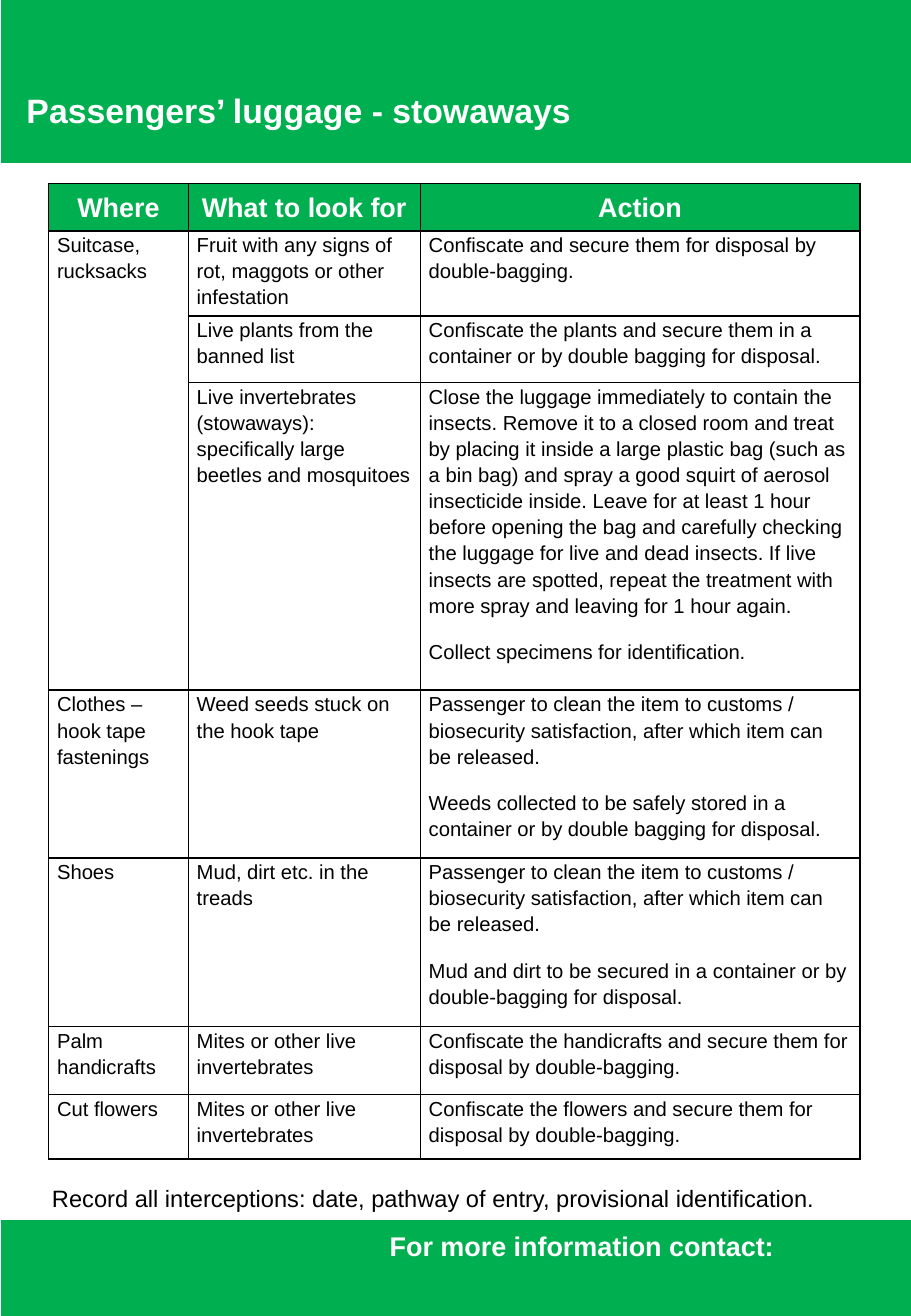
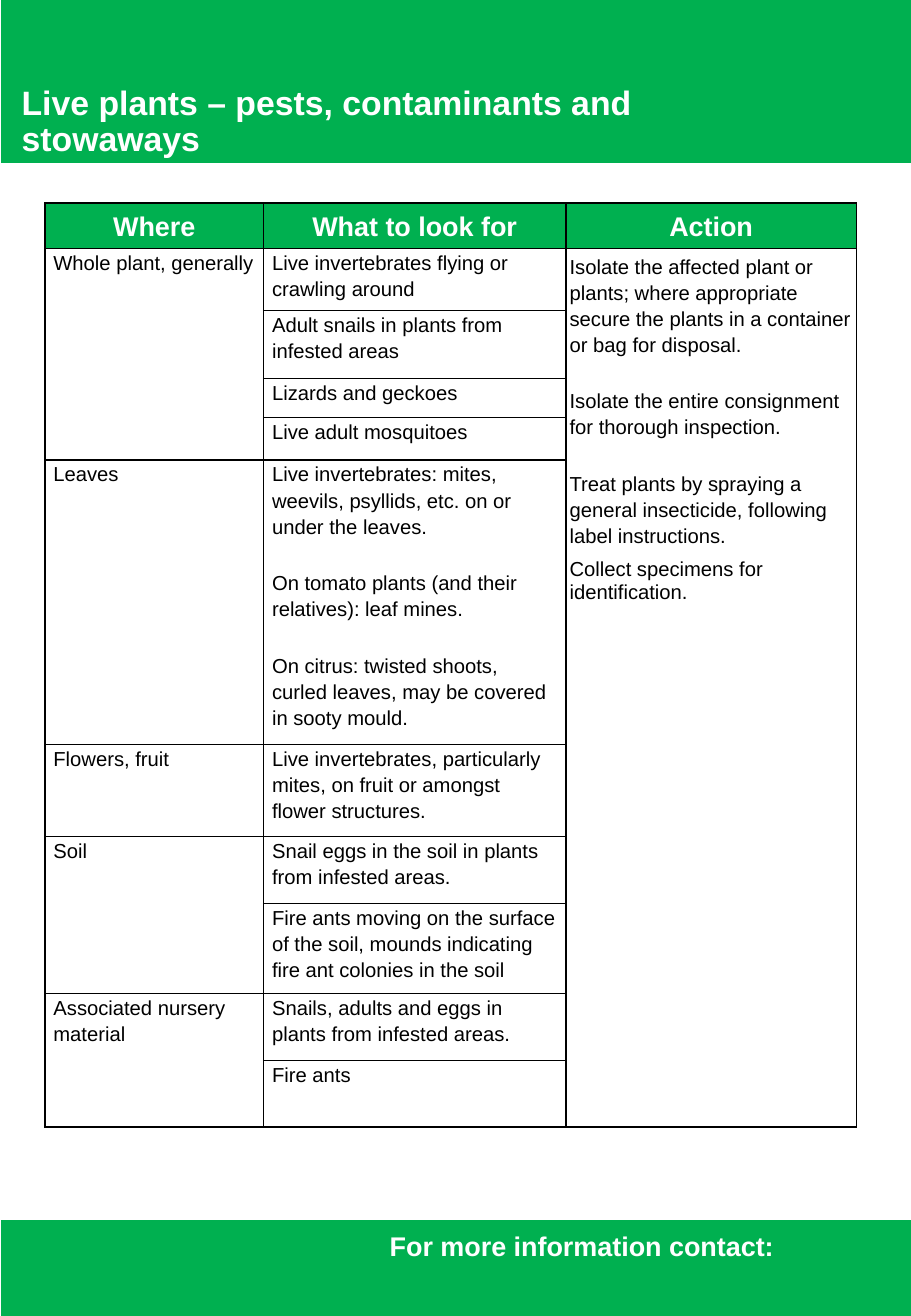
import pptx
import pptx.dml.color
import pptx.enum.shapes
import pptx.enum.text
import pptx.oxml
import pptx.oxml.ns
import pptx.util

PX = 9144  # EMU in one px, 100 px to the inch
COLOURS = {"green": "00B050", "white": "FFFFFF", "black": "000000"}
FONT = "Arial"
HEADINGS = ["Where", "What to look for", "Action"]
CLEANING = ("Passenger to clean the item to customs / biosecurity satisfaction, "
            "after which item can be released.")

# In the tables None continues the cell above; a list holds paragraphs.
LUGGAGE_ROWS = [
    HEADINGS,
    ["Suitcase, rucksacks",
     "Fruit with any signs of rot, maggots or other infestation",
     "Confiscate and secure them for disposal by double-bagging."],
    [None, "Live plants from the banned list",
     "Confiscate the plants and secure them in a container or by double bagging for disposal."],
    [None,
     "Live invertebrates (stowaways): specifically large beetles and mosquitoes",
     ["Close the luggage immediately to contain the insects. Remove it to a closed room and "
      "treat by placing it inside a large plastic bag (such as a bin bag) and spray a good "
      "squirt of aerosol insecticide inside. Leave for at least 1 hour before opening the bag "
      "and carefully checking the luggage for live and dead insects. If live insects are "
      "spotted, repeat the treatment with more spray and leaving for 1 hour again.",
      "Collect specimens for identification."]],
    ["Clothes – hook tape fastenings", "Weed seeds stuck on the hook tape",
     [CLEANING,
      "Weeds collected to be safely stored in a container or by double bagging for disposal."]],
    ["Shoes", "Mud, dirt etc. in the treads",
     [CLEANING,
      "Mud and dirt to be secured in a container or by double-bagging for disposal."]],
    ["Palm handicrafts", "Mites or other live invertebrates",
     "Confiscate the handicrafts and secure them for disposal by double-bagging."],
    ["Cut flowers", "Mites or other live invertebrates",
     "Confiscate the flowers and secure them for disposal by double-bagging."],
]

PLANT_ROWS = [
    HEADINGS,
    ["Whole plant, generally", "Live invertebrates flying or crawling around",
     ["Isolate the affected plant or plants; where appropriate secure the plants in a "
      "container or bag for disposal.",
      "Isolate the entire consignment for thorough inspection.",
      "Treat plants by spraying a general insecticide, following label instructions.",
      "Collect specimens for identification."]],
    [None, "Adult snails in plants from infested areas", None],
    [None, "Lizards and geckoes", None],
    [None, "Live adult mosquitoes", None],
    ["Leaves",
     ["Live invertebrates: mites, weevils, psyllids, etc. on or under the leaves.",
      "On tomato plants (and their relatives): leaf mines.",
      "On citrus: twisted shoots, curled leaves, may be covered in sooty mould."], None],
    ["Flowers, fruit",
     "Live invertebrates, particularly mites, on fruit or amongst flower structures.", None],
    ["Soil", "Snail eggs in the soil in plants from infested areas.", None],
    [None,
     "Fire ants moving on the surface of the soil, mounds indicating fire ant colonies "
     "in the soil", None],
    ["Associated nursery material",
     "Snails, adults and eggs in plants from infested areas.", None],
    [None, "Fire ants", None],
]


def colour(name):
    return pptx.dml.color.RGBColor.from_string(COLOURS[name])


def add_borders(cell):
    properties = cell._tc.get_or_add_tcPr()
    for side in ("lnL", "lnR", "lnT", "lnB"):
        properties.append(pptx.oxml.parse_xml(
            f'<a:{side} {pptx.oxml.ns.nsdecls("a")} w="12700"><a:solidFill>'
            f'<a:srgbClr val="{COLOURS["black"]}"/></a:solidFill></a:{side}>'))


def set_insets(cell, sides, ends):
    cell.margin_left = cell.margin_right = sides * PX
    cell.margin_top = cell.margin_bottom = ends * PX


class Poster:
    """Holds the presentation, its style and the current slide."""

    def __init__(self):
        self.presentation = pptx.Presentation()
        self.presentation.slide_width = 750 * PX
        self.presentation.slide_height = 1083 * PX
        self.slide = None

    def add_slide(self):
        """Start a slide with the shared bands and contact line."""
        self.slide = self.presentation.slides.add_slide(self.presentation.slide_layouts[6])
        self.band(-1, 135)
        self.band(1004, 79)
        self.text("For more information contact:", 311, 1007, 371, 37, 16, "white", bold=True)

    def band(self, top, height):
        shape = self.slide.shapes.add_shape(
            pptx.enum.shapes.MSO_SHAPE.RECTANGLE, 1 * PX, top * PX, 749 * PX, height * PX)
        shape.shadow.inherit = False
        shape.fill.solid()
        shape.fill.fore_color.rgb = colour("green")
        shape.line.fill.background()

    def style(self, paragraph, size, ink, bold=False):
        font = paragraph.font
        font.name, font.size, font.bold = FONT, pptx.util.Pt(size), bold
        font.color.rgb = colour(ink)

    def text(self, text, left, top, width, height, size, ink, bold=False, spacing=1.0):
        shape = self.slide.shapes.add_textbox(left * PX, top * PX, width * PX, height * PX)
        shape.text_frame.word_wrap = True
        paragraph = shape.text_frame.paragraphs[0]
        paragraph.text = text
        paragraph.line_spacing = spacing
        self.style(paragraph, size, ink, bold)

    def title(self, text, left, top, width):
        self.text(text, left, top, width, 44, 20, "white", bold=True, spacing=0.9)

    def heading_cell(self, cell, text):
        set_insets(cell, 3, 3)
        paragraph = cell.text_frame.paragraphs[0]
        paragraph.text = text
        paragraph.alignment = pptx.enum.text.PP_ALIGN.CENTER
        paragraph.line_spacing = 1.19
        paragraph.space_after = pptx.util.Pt(6)
        self.style(paragraph, 16, "white", bold=True)

    def body_cell(self, cell, content, space_before):
        set_insets(cell, 7, 0)
        texts = [content] if isinstance(content, str) else content
        cell.text_frame.text = "\n".join(texts)
        for index, paragraph in enumerate(cell.text_frame.paragraphs):
            paragraph.line_spacing = 1.15
            paragraph.space_before = pptx.util.Pt(space_before if index else 0)
            paragraph.space_after = pptx.util.Pt(6)
            self.style(paragraph, 12, "black")

    def table(self, rows, left, top, widths, heights, space_before):
        """Add a bordered table, merging each None cell into the one above."""
        table = self.slide.shapes.add_table(
            len(rows), len(widths), left * PX, top * PX,
            sum(widths) * PX, sum(heights) * PX).table
        table.horz_banding = False
        for column, width in zip(table.columns, widths):
            column.width = width * PX
        for row, height in zip(table.rows, heights):
            row.height = height * PX
        for r, row in enumerate(rows):
            for c, content in enumerate(row):
                cell = table.cell(r, c)
                add_borders(cell)
                cell.fill.solid()
                cell.fill.fore_color.rgb = colour("white" if r else "green")
                if r == 0:
                    self.heading_cell(cell, content)
                elif content is not None:
                    self.body_cell(cell, content, space_before)
        for c in range(len(widths)):
            starts = [r for r, row in enumerate(rows) if row[c] is not None]
            for start, end in zip(starts, starts[1:] + [len(rows)]):
                if end - start > 1:
                    table.cell(start, c).merge(table.cell(end - 1, c))
        return table


def main():
    poster = Poster()

    poster.add_slide()
    poster.table(LUGGAGE_ROWS, 40, 151, [115, 191, 362],
                 [39, 70, 55, 253, 138, 139, 56, 53], space_before=6)
    poster.title("Passengers’ luggage - stowaways", 12, 73, 494)
    poster.text("Record all interceptions: date, pathway of entry, provisional identification.",
                33, 972, 687, 37, 14, "black", spacing=0.9)

    poster.add_slide()
    poster.title("Live plants – pests, contaminants and stowaways", 8, 66, 560)
    table = poster.table(PLANT_ROWS, 37, 167, [180, 249, 239],
                         [35, 51, 56, 32, 35, 231, 76, 55, 74, 55, 55], space_before=12)
    action = table.cell(1, 2)
    set_insets(action, 3, 3)
    closing = action.text_frame.paragraphs[-1]
    closing.line_spacing = 1.0
    closing.space_before = closing.space_after = pptx.util.Pt(0)

    poster.presentation.save("out.pptx")


if __name__ == "__main__":
    main()
